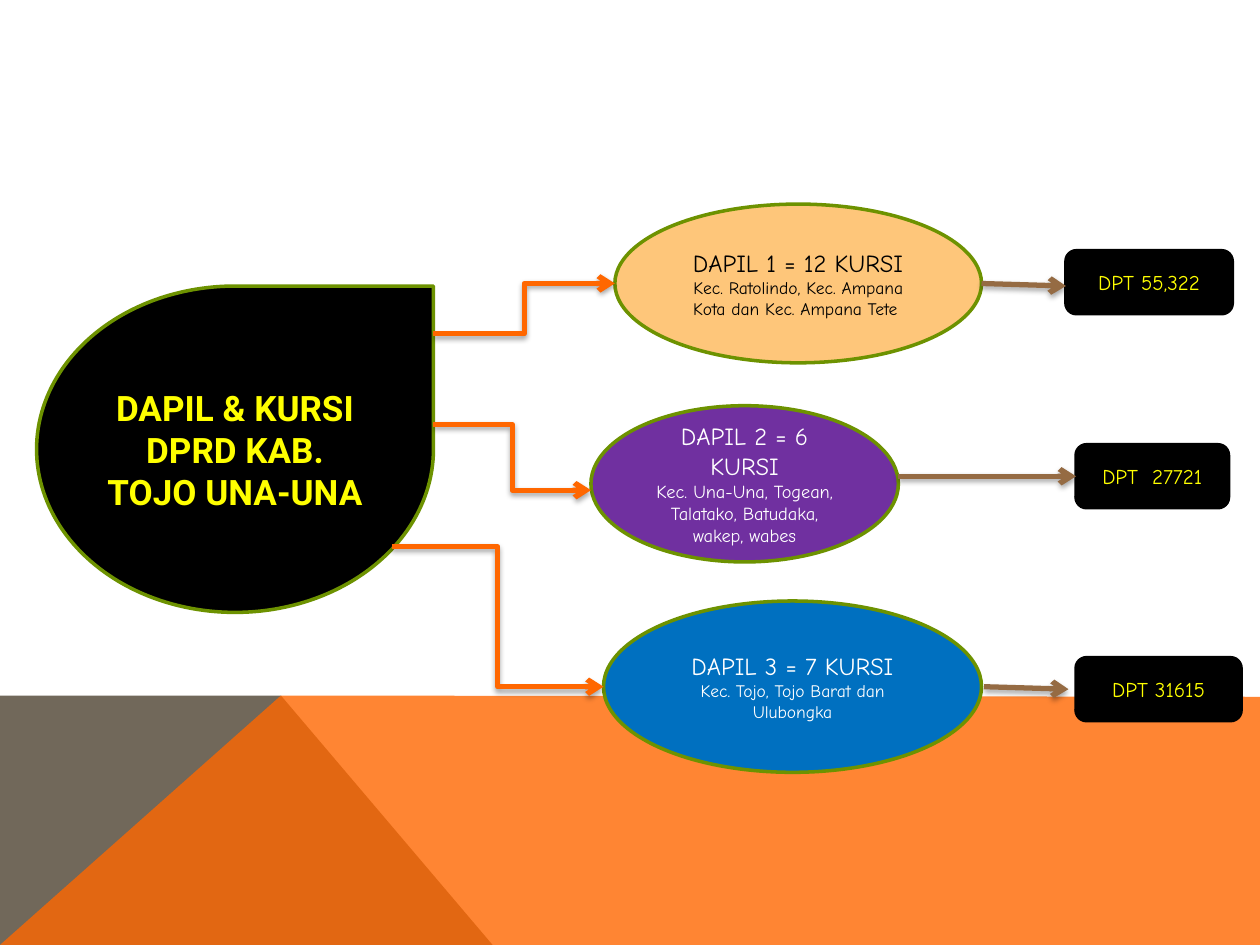
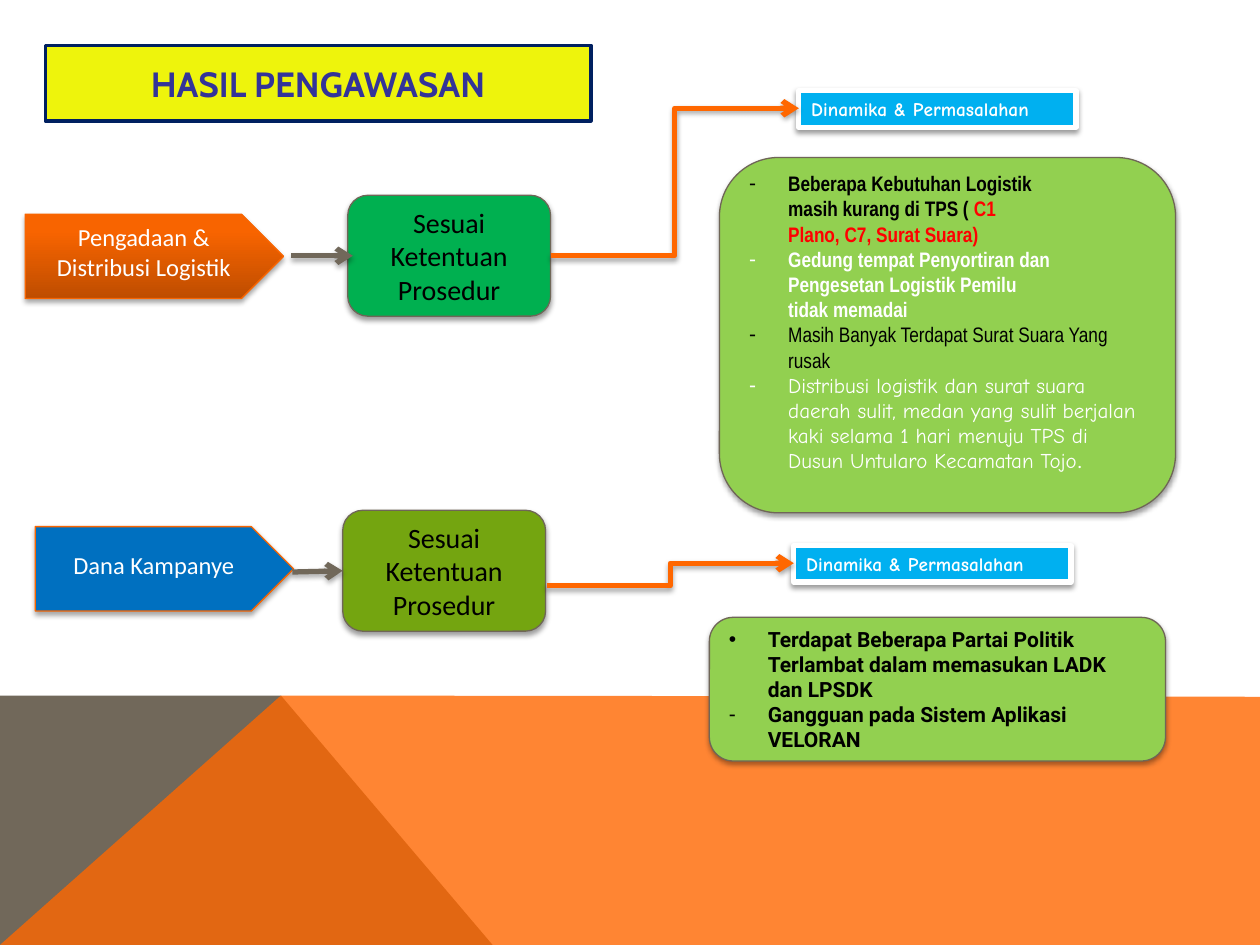
from dataclasses import dataclass

from lxml.etree import SubElement
from pptx import Presentation
from pptx.dml.color import RGBColor
from pptx.enum.shapes import MSO_CONNECTOR, MSO_SHAPE
from pptx.enum.text import MSO_ANCHOR, PP_ALIGN
from pptx.oxml.ns import qn
from pptx.util import Inches, Pt

# Shared colours
BLACK = RGBColor(0x00, 0x00, 0x00)
WHITE = RGBColor(0xFF, 0xFF, 0xFF)
YELLOW = RGBColor(0xFF, 0xFF, 0x00)
RED = RGBColor(0xFF, 0x00, 0x00)
ORANGE = RGBColor(0xFF, 0x67, 0x00)
PLATE_LINE = RGBColor(0xF9, 0x65, 0x00)
PLATE_DARK = RGBColor(0xBE, 0x4D, 0x00)
PLATE_LIGHT = RGBColor(0xF8, 0x64, 0x00)
TAUPE = RGBColor(0x71, 0x68, 0x5A)
TAUPE_LINE = RGBColor(0x6F, 0x66, 0x57)
BROWN = RGBColor(0x95, 0x6B, 0x43)
OLIVE = RGBColor(0x6D, 0x92, 0x00)
PEACH = RGBColor(0xFE, 0xC6, 0x7A)
PURPLE = RGBColor(0x70, 0x30, 0xA0)
BLUE = RGBColor(0x00, 0x70, 0xC0)
SKY = RGBColor(0x00, 0xB0, 0xF0)
GREEN = RGBColor(0x00, 0xB0, 0x50)
MOSS = RGBColor(0x74, 0xA5, 0x10)
LIME = RGBColor(0x92, 0xD0, 0x50)
TITLE_FILL = RGBColor(0xEE, 0xF4, 0x0C)
TITLE_LINE = RGBColor(0x00, 0x20, 0x60)
TITLE_TEXT = RGBColor(0x33, 0x33, 0x99)

COMIC, ROBOTO, NARROW = "Comic Neue", "Roboto", "Arial Narrow"
CALIBRI, CABIN = "Calibri", "Cabin"
HANGING = Inches(0.31)


@dataclass
class Span:
    text: str
    size: float
    font: str
    color: RGBColor
    bold: bool = False


@dataclass
class Para:
    spans: list[Span]
    bullet: str = ""


@dataclass
class Box:
    kind: MSO_SHAPE
    left: float
    top: float
    width: float
    height: float
    fill: RGBColor
    line: RGBColor
    line_width: float
    paras: list[Para]
    shadow: int = 0
    listing: bool = False
    align: PP_ALIGN = PP_ALIGN.CENTER
    margin_top: float = 0.05
    margin_bottom: float = 0.05


@dataclass
class Link:
    start: tuple[float, float]
    end: tuple[float, float]
    color: RGBColor = ORANGE
    kind: MSO_CONNECTOR = MSO_CONNECTOR.ELBOW


def add_shadow(shape, opacity: int) -> None:
    effects = SubElement(shape._element.spPr, qn("a:effectLst"))
    shadow = SubElement(effects, qn("a:outerShdw"), blurRad=str(Pt(3.1)),
                        dist=str(Pt(1.7)), dir="5400000", rotWithShape="0")
    color = SubElement(shadow, qn("a:srgbClr"), val="000000")
    SubElement(color, qn("a:alpha"), val=str(opacity * 1000))


def write_para(paragraph, para: Para, box: Box) -> None:
    paragraph.alignment = box.align
    for span in para.spans:
        run = paragraph.add_run()
        run.text = span.text
        run.font.size = Pt(span.size)
        run.font.name = span.font
        run.font.bold = span.bold
        run.font.color.rgb = span.color
    if box.listing:
        paragraph.line_spacing = Pt(14.4)
        properties = paragraph._p.get_or_add_pPr()
        properties.set("marL", str(HANGING))
        properties.set("indent", str(-HANGING if para.bullet else 0))
        if para.bullet:
            SubElement(properties, qn("a:buFont"), typeface="Arial")
            SubElement(properties, qn("a:buChar"), char=para.bullet)


def draw_box(page, box: Box):
    shape = page.shapes.add_shape(box.kind, Inches(box.left), Inches(box.top),
                                  Inches(box.width), Inches(box.height))
    shape.fill.solid()
    shape.fill.fore_color.rgb = box.fill
    shape.line.color.rgb = box.line
    shape.line.width = Pt(box.line_width)
    if box.shadow:
        add_shadow(shape, box.shadow)
    else:
        shape.shadow.inherit = False
    frame = shape.text_frame
    frame.word_wrap = True
    frame.vertical_anchor = MSO_ANCHOR.MIDDLE
    frame.margin_top = Inches(box.margin_top)
    frame.margin_bottom = Inches(box.margin_bottom)
    for index, para in enumerate(box.paras):
        paragraph = frame.add_paragraph() if index else frame.paragraphs[0]
        write_para(paragraph, para, box)
    return shape


def draw_link(page, link: Link):
    ends = [Inches(value) for value in (*link.start, *link.end)]
    connector = page.shapes.add_connector(link.kind, *ends)
    connector.line.color.rgb = link.color
    connector.line.width = Pt(3)
    SubElement(connector.line._get_or_add_ln(), qn("a:tailEnd"), type="arrow")
    add_shadow(connector, 35)
    return connector


def draw_straight(page, start, end, color: RGBColor):
    return draw_link(page, Link(start, end, color, MSO_CONNECTOR.STRAIGHT))


def draw_band(page, points: list[tuple[float, float]], color: RGBColor, opacity: int) -> None:
    corners = [(Inches(x), Inches(y)) for x, y in points]
    builder = page.shapes.build_freeform(*corners[0], scale=1.0)
    builder.add_line_segments(corners[1:], close=True)
    band = builder.convert_to_shape()
    band.shadow.inherit = False
    band.fill.solid()
    band.fill.fore_color.rgb = color
    band.line.fill.background()
    if opacity < 100:
        color_node = band._element.spPr.find(qn("a:solidFill"))[0]
        SubElement(color_node, qn("a:alpha"), val=str(opacity * 1000))


def new_page(deck):
    page = deck.slides.add_slide(deck.slide_layouts[6])
    draw_band(page, [(0, 7.5), (0, 5.52), (2.23, 5.52), (3.91, 7.5)], TAUPE, 100)
    draw_band(page, [(0, 7.5), (2.23, 5.52), (10, 5.53), (10, 7.5)], ORANGE, 80)
    return page


# Box styles
def district(left, top, width, height, fill, color, heading, areas, size=10.0) -> Box:
    return Box(MSO_SHAPE.OVAL, left, top, width, height, fill, OLIVE, 2,
               [Para([Span(heading, 14, COMIC, color)]),
                Para([Span(areas, size, COMIC, color)])])


def voters(left, top, width, text) -> Box:
    return Box(MSO_SHAPE.ROUNDED_RECTANGLE, left, top, width, 0.5, BLACK, BLACK, 2,
               [Para([Span(text, 12, COMIC, YELLOW)])])


def topic(left, top, fill, text) -> Box:
    return Box(MSO_SHAPE.PENTAGON, left, top, 2.05, 0.67, fill, PLATE_LINE, 0.75,
               [Para([Span(text, 14, CALIBRI, WHITE)])], 35, margin_bottom=0.12)


def verdict(left, top, fill) -> Box:
    return Box(MSO_SHAPE.ROUNDED_RECTANGLE, left, top, 1.61, 0.96, fill, TAUPE_LINE, 0.75,
               [Para([Span("Sesuai Ketentuan Prosedur", 16, CALIBRI, BLACK)])], 38)


def issue_label(left, top) -> Box:
    return Box(MSO_SHAPE.RECTANGLE, left, top, 2.2, 0.29, SKY, WHITE, 3,
               [Para([Span("Dinamika & Permasalahan", 11, COMIC, WHITE, True)])], 38,
               align=PP_ALIGN.LEFT)


def issue_list(left, top, height, paras, margin_bottom) -> Box:
    return Box(MSO_SHAPE.ROUNDED_RECTANGLE, left, top, 3.62, height, LIME, TAUPE_LINE, 0.75,
               paras, 38, True, PP_ALIGN.LEFT, 0, margin_bottom)


def narrow(text: str, color: RGBColor, bold: bool = True) -> Span:
    return Span(text, 12, NARROW, color, bold)


def build_districts(deck) -> None:
    page = new_page(deck)
    heading = [Para([Span(text, 20, ROBOTO, YELLOW, True)])
               for text in ("DAPIL & KURSI", "DPRD KAB. TOJO UNA-UNA")]
    draw_box(page, Box(MSO_SHAPE.TEAR, 0.29, 2.27, 3.15, 2.59, BLACK, OLIVE, 2, heading))

    # Electoral districts
    for box in (
        district(4.88, 1.62, 2.91, 1.26, PEACH, BLACK, "DAPIL 1 = 12 KURSI",
                 "Kec. Ratolindo, Kec. Ampana Kota dan Kec. Ampana Tete "),
        district(4.69, 3.22, 2.44, 1.24, PURPLE, WHITE, "DAPIL 2 = 6 KURSI",
                 "Kec. Una-Una, Togean, Talatako, Batudaka, wakep, wabes", 10.5),
        district(4.79, 4.77, 3, 1.36, BLUE, WHITE, "DAPIL 3 = 7 KURSI",
                 "Kec. Tojo, Tojo Barat dan Ulubongka"),
    ):
        draw_box(page, box)
    for link in (Link((3.44, 2.65), (4.88, 2.25)),
                 Link((3.44, 3.37), (4.69, 3.89)),
                 Link((3.11, 4.34), (4.79, 5.45))):
        draw_link(page, link)

    # Registered voters
    draw_box(page, voters(8.46, 1.99, 1.32, "DPT 55,322"))
    second_voters = draw_box(page, voters(8.54, 3.53, 1.21, "DPT  27721"))
    draw_box(page, voters(8.54, 5.22, 1.31, "DPT 31615"))
    draw_straight(page, (7.79, 2.25), (8.46, 2.27), BROWN)
    draw_straight(page, (7.13, 3.78), (8.54, 3.78), BROWN).end_connect(second_voters, 1)
    draw_straight(page, (7.81, 5.45), (8.48, 5.47), BROWN)


def build_findings(deck) -> None:
    page = new_page(deck)
    draw_box(page, Box(MSO_SHAPE.RECTANGLE, 0.36, 0.36, 4.33, 0.6, TITLE_FILL, TITLE_LINE, 2,
                       [Para([Span("HASIL PENGAWASAN", 20, CABIN, TITLE_TEXT, True)])]))

    # Logistics
    logistics = draw_box(page, topic(0.2, 1.7, PLATE_LIGHT, "Pengadaan & Distribusi Logistik"))
    logistics.fill.gradient()
    logistics.fill.gradient_angle = 90
    for stop, color, position in zip(logistics.fill.gradient_stops,
                                     (PLATE_DARK, PLATE_LIGHT), (0, 0.8)):
        stop.color.rgb = color
        stop.position = position
    draw_box(page, verdict(2.76, 1.55, GREEN))
    draw_straight(page, (2.31, 2.03), (2.8, 2.03), TAUPE)
    draw_box(page, issue_label(6.34, 0.72))
    draw_link(page, Link((4.37, 2.03), (6.34, 0.86)))
    draw_box(page, issue_list(5.71, 1.25, 2.82, [
        Para([narrow("Beberapa Kebutuhan Logistik", BLACK)], "-"),
        Para([narrow("masih kurang di TPS ( ", BLACK), narrow("C1", RED)]),
        Para([narrow("Plano, C7, Surat Suara)", RED)]),
        Para([narrow("Gedung tempat Penyortiran dan", WHITE)], "-"),
        Para([narrow("Pengesetan Logistik Pemilu", WHITE)]),
        Para([narrow("tidak memadai", WHITE)]),
        Para([narrow("Masih Banyak Terdapat Surat Suara Yang rusak", BLACK, False)], "-"),
        Para([Span("Distribusi logistik dan surat suara daerah sulit, medan yang sulit "
                   "berjalan kaki selama 1 hari menuju TPS di Dusun Untularo "
                   "Kecamatan Tojo", 12, COMIC, WHITE),
              Span(".", 12, ROBOTO, WHITE)], "-"),
    ], 0.21))

    # Campaign funds
    draw_box(page, topic(0.28, 4.18, BLUE, "Dana Kampanye"))
    funds_verdict = draw_box(page, verdict(2.72, 4.05, MOSS))
    draw_straight(page, (2.32, 4.54), (2.72, 4.53), TAUPE).end_connect(funds_verdict, 1)
    draw_box(page, issue_label(6.3, 4.33))
    draw_link(page, Link((4.34, 4.65), (6.3, 4.47)))
    draw_box(page, issue_list(5.63, 4.9, 1.14, [
        Para([Span("Terdapat Beberapa Partai Politik Terlambat dalam memasukan "
                   "LADK dan LPSDK", 12, ROBOTO, BLACK, True)], "•"),
        Para([Span("Gangguan pada Sistem Aplikasi VELORAN", 12, ROBOTO, BLACK, True)], "-"),
    ], 0))


def main() -> None:
    deck = Presentation()
    deck.slide_width, deck.slide_height = Inches(10), Inches(7.5)
    build_districts(deck)
    build_findings(deck)
    deck.save("out.pptx")


if __name__ == "__main__":
    main()
